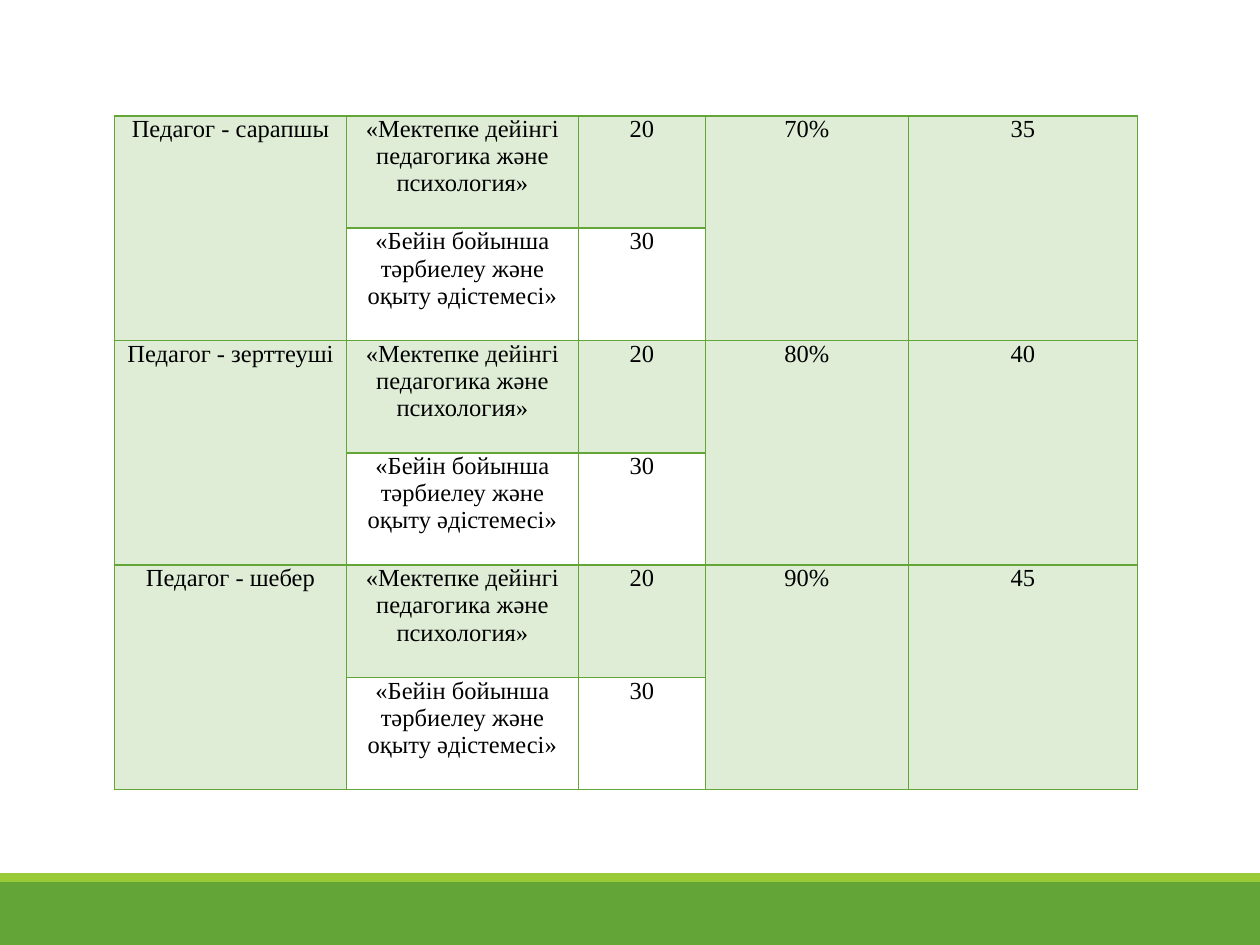
from lxml import etree
from pptx import Presentation
from pptx import util as u
from pptx.dml.color import RGBColor
from pptx.enum import shapes, text
from pptx.oxml.ns import qn

GREEN, LIME, BLACK = "63A537", "99CB38", "000000"
COLS = [132.5, 132.5, 72.7, 115.9, 131]
ROW_H = 64.2
SUBJECTS = [
    ("«Мектепке дейінгі педагогика және психология»", "20"),
    ("«Бейін бойынша тәрбиелеу және оқыту әдістемесі»", "30"),
]
CATEGORIES = [
    ("Педагог - сарапшы", "70%", "35"),
    ("Педагог - зерттеуші", "80%", "40"),
    ("Педагог - шебер", "90%", "45"),
]


def rgb(color):
    return RGBColor.from_string(color)


def add_bar(s, top, height, color):
    sp = s.shapes.add_shape(shapes.MSO_SHAPE.RECTANGLE, 0, u.Pt(top), u.Pt(720), u.Pt(height))
    sp.shadow.inherit = False
    sp.fill.solid()
    sp.fill.fore_color.rgb = rgb(color)
    sp.line.fill.background()


def style_cell(cell, tinted):
    cell.margin_left = cell.margin_right = u.Pt(4.3)
    cell.margin_top = cell.margin_bottom = 0
    tcPr = cell._tc.get_or_add_tcPr()
    for side in ("lnL", "lnR", "lnT", "lnB"):
        ln = etree.SubElement(tcPr, qn("a:" + side), w=str(u.Pt(1)))
        fill = etree.SubElement(ln, qn("a:solidFill"))
        etree.SubElement(fill, qn("a:srgbClr"), val=GREEN)
    if tinted:
        cell.fill.solid()
        cell.fill.fore_color.rgb = rgb(GREEN)
        clr = tcPr.find(qn("a:solidFill")).find(qn("a:srgbClr"))
        etree.SubElement(clr, qn("a:alpha"), val="20000")
    else:
        cell.fill.background()


def write_cell(cell, value):
    p = cell.text_frame.paragraphs[0]
    p.alignment = text.PP_ALIGN.CENTER
    r = p.add_run()
    r.text = value
    r.font.name = "Times New Roman"
    r.font.size = u.Pt(14)
    r.font.color.rgb = rgb(BLACK)


def add_category_table(s):
    n = len(CATEGORIES) * len(SUBJECTS)
    tbl = s.shapes.add_table(n, len(COLS), u.Pt(65.5), u.Pt(66.2),
                             u.Pt(sum(COLS)), u.Pt(ROW_H * n)).table
    tbl.first_row = tbl.horz_banding = False
    for col, width in zip(tbl.columns, COLS):
        col.width = u.Pt(width)
    for i, row in enumerate(tbl.rows):
        row.height = u.Pt(ROW_H)
        for j, cell in enumerate(row.cells):
            style_cell(cell, tinted=i % 2 == 0 or j not in (1, 2))
    for i, values in enumerate(CATEGORIES):
        top = i * len(SUBJECTS)
        for j, value in zip((0, 3, 4), values):
            tbl.cell(top, j).merge(tbl.cell(top + 1, j))
            write_cell(tbl.cell(top, j), value)
        for k, (subject, count) in enumerate(SUBJECTS):
            write_cell(tbl.cell(top + k, 1), subject)
            write_cell(tbl.cell(top + k, 2), count)


def main():
    prs = Presentation()
    prs.slide_width, prs.slide_height = u.Pt(720), u.Pt(540)
    s = prs.slides.add_slide(prs.slide_layouts[6])
    add_bar(s, 504, 36, GREEN)
    add_bar(s, 499, 5, LIME)
    add_category_table(s)
    prs.save("out.pptx")


if __name__ == "__main__":
    main()
